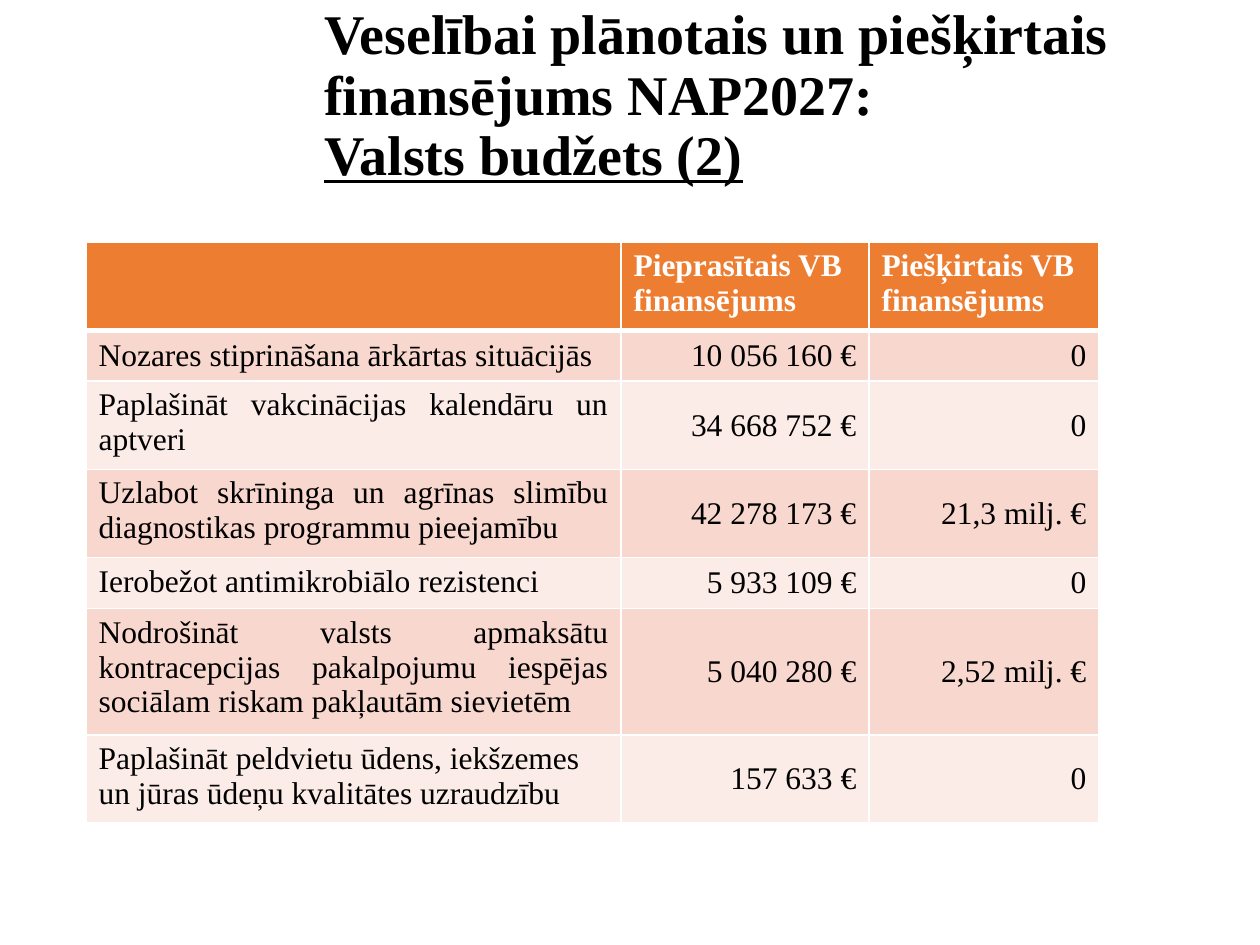
from dataclasses import dataclass

from lxml.etree import SubElement
from pptx import Presentation
from pptx.dml.color import RGBColor
from pptx.enum.text import MSO_ANCHOR as Anchor, PP_ALIGN as Align
from pptx.oxml.ns import qn
from pptx.util import Emu, Pt

PX = 914400 // 126
FONT = "Times New Roman"
COLORS = {"text": "000000", "white": "FFFFFF", "header": "ED7D31",
          "odd": "F8D7CE", "even": "FCECE8"}


@dataclass
class Measure:
    label: str
    requested: str
    granted: str
    align: Align = Align.JUSTIFY
    anchor: Anchor = Anchor.TOP


HEADINGS = ("", "Pieprasītais VB finansējums", "Piešķirtais VB finansējums")
ROW_HEIGHT = 51
COLUMN_WIDTHS = (535, 248, 230)
MEASURES = (
    Measure("Nozares stiprināšana ārkārtas situācijās", "10 056 160 €", "0",
            Align.LEFT, Anchor.MIDDLE),
    Measure("Paplašināt vakcinācijas kalendāru un aptveri", "34 668 752 €", "0"),
    Measure("Uzlabot skrīninga un agrīnas slimību diagnostikas programmu pieejamību",
            "42 278 173 €", "21,3 milj. €"),
    Measure("Ierobežot antimikrobiālo rezistenci", "5 933 109 €", "0"),
    Measure("Nodrošināt valsts apmaksātu kontracepcijas pakalpojumu iespējas "
            "sociālam riskam pakļautām sievietēm", "5 040 280 €", "2,52 milj. €"),
    Measure("Paplašināt peldvietu ūdens, iekšzemes un jūras ūdeņu kvalitātes uzraudzību",
            "157 633 €", "0", Align.LEFT),
)


def px(n: int) -> Emu:
    return Emu(n * PX)


def style(font, color: str, **formats) -> None:
    for name, value in {"name": FONT, **formats}.items():
        setattr(font, name, value)
    font.color.rgb = RGBColor.from_string(COLORS[color])


def set_borders(cell, bottom: int) -> None:
    """Draw white borders; they must come before the cell's fill."""
    tc_pr = cell._tc.get_or_add_tcPr()
    for side, width in {"L": 1, "R": 1, "T": 1, "B": bottom}.items():
        line = SubElement(tc_pr, qn(f"a:ln{side}"), w=str(Pt(width)))
        fill = SubElement(line, qn("a:solidFill"))
        SubElement(fill, qn("a:srgbClr"), val=COLORS["white"])


def fill_cell(cell, text: str, fill: str, color: str = "text", bold: bool = False,
              align: Align = Align.LEFT, anchor: Anchor = Anchor.TOP,
              bottom: int = 1) -> None:
    set_borders(cell, bottom)
    cell.fill.solid()
    cell.fill.fore_color.rgb = RGBColor.from_string(COLORS[fill])
    cell.vertical_anchor = anchor
    p = cell.text_frame.paragraphs[0]
    p.alignment = align
    style(p.font, color, size=Pt(18), bold=bold)
    if text:
        r = p.add_run()
        r.text = text
        style(r.font, color, size=Pt(18), bold=bold)


def add_title(s) -> None:
    sp = s.shapes.add_textbox(px(312), 0, px(872), px(171))
    tf = sp.text_frame
    tf.word_wrap = True
    tf.vertical_anchor = Anchor.TOP
    p = tf.paragraphs[0]
    p.line_spacing = 0.9
    for text, underline in (("Veselībai plānotais un piešķirtais finansējums NAP2027:", False),
                            ("Valsts budžets (2)", True)):
        if underline:
            p.add_line_break()
        r = p.add_run()
        r.text = text
        style(r.font, "text", size=Pt(32), bold=True, underline=underline)


def add_budget_table(s) -> None:
    """Rows share one minimum height and grow with their text."""
    rows = len(MEASURES) + 1
    table = s.shapes.add_table(rows, len(COLUMN_WIDTHS), px(86), px(242),
                               px(sum(COLUMN_WIDTHS)), px(rows * ROW_HEIGHT)).table
    for column, width in zip(table.columns, COLUMN_WIDTHS):
        column.width = px(width)
    for row in table.rows:
        row.height = px(ROW_HEIGHT)
    for col, heading in enumerate(HEADINGS):
        fill_cell(table.cell(0, col), heading, "header", "white", bold=True, bottom=3)
    for row, m in enumerate(MEASURES, 1):
        fill = "odd" if row % 2 else "even"
        fill_cell(table.cell(row, 0), m.label, fill, align=m.align, anchor=m.anchor)
        for col, amount in enumerate((m.requested, m.granted), 1):
            fill_cell(table.cell(row, col), amount, fill,
                      align=Align.RIGHT, anchor=Anchor.MIDDLE)


def main() -> None:
    prs = Presentation()
    prs.slide_width, prs.slide_height = px(1260), px(945)
    s = prs.slides.add_slide(prs.slide_layouts[6])
    add_title(s)
    add_budget_table(s)
    prs.save("out.pptx")


if __name__ == "__main__":
    main()
